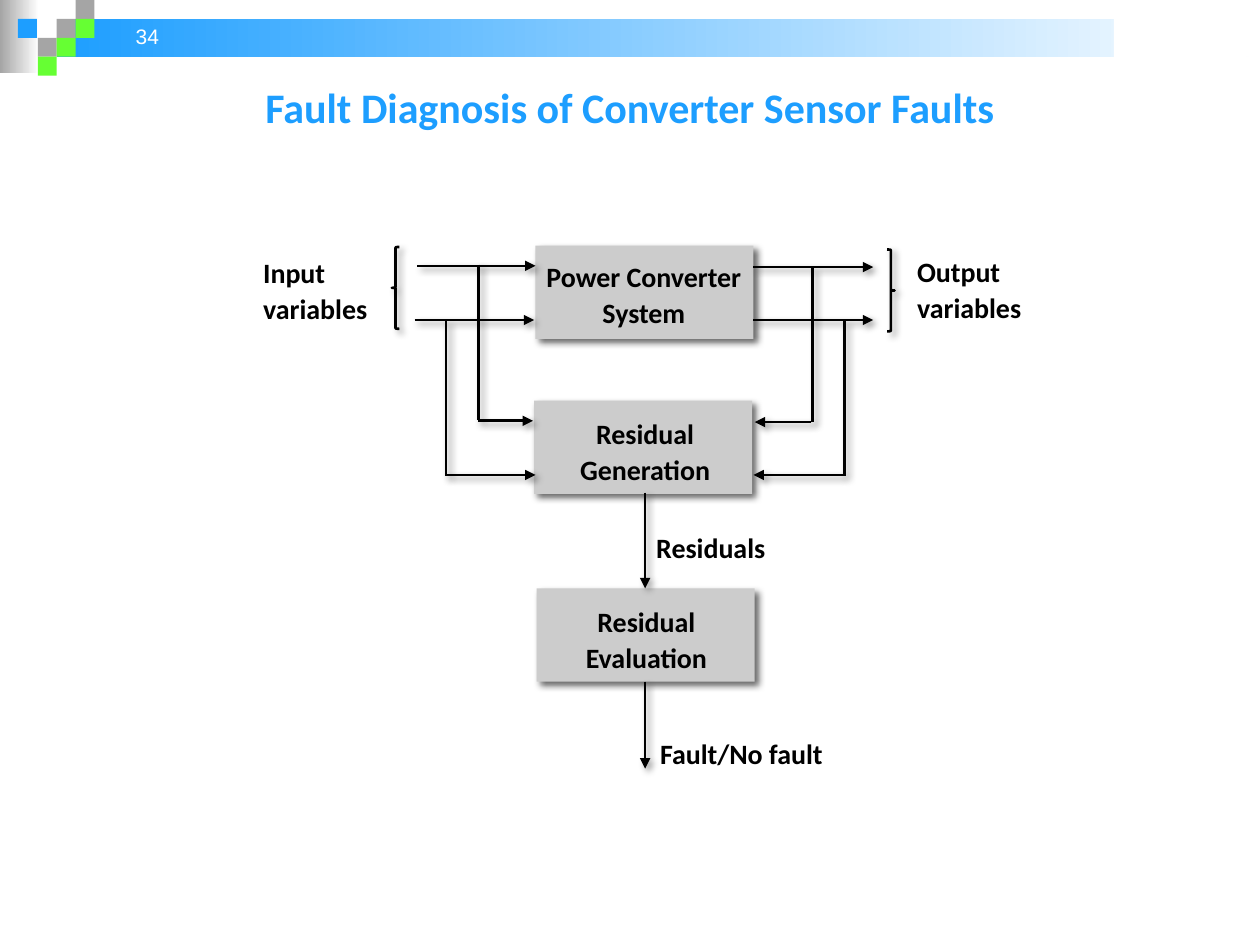
from typing import NamedTuple

from lxml.etree import SubElement
from pptx import Presentation
from pptx.dml.color import RGBColor
from pptx.enum.shapes import MSO_CONNECTOR, MSO_SHAPE as Shape
from pptx.enum.text import MSO_ANCHOR as Anchor, PP_ALIGN as Align
from pptx.oxml.ns import qn
from pptx.util import Inches, Pt

# Slide grid: 100 columns by 75 rows
COLS, ROWS = 100, 75
CELL = Inches(10) / COLS
TILE = 1.5
BLUE, GREY, GREEN = "1D9EFF", "A5A5A5", "66FF33"
BLACK, WHITE, BOX_GREY = "000000", "FFFFFF", "CCCCCC"
BOX_W, BOX_H = 17.3, 7.4


class Tile(NamedTuple):
    col: float
    row: int
    color: str


class Label(NamedTuple):
    text: str
    x: float
    y: float
    w: float
    h: float
    align: Align = Align.LEFT


class Wire(NamedTuple):
    x1: float
    y1: float
    x2: float
    y2: float
    arrow: bool = True


TILES = [
    Tile(3, 1, GREY), Tile(4, 0, GREY), Tile(4, 1, GREEN),
    Tile(2, 2, GREY), Tile(0.95, 1, BLUE), Tile(3, 2, GREEN),
    Tile(2, 3, GREEN),
]
BOXES = [(42.5, 19.5), (42.4, 31.8), (42.6, 46.7)]
BRACES = [(31.1, 19.6, 0), (70.4, 19.8, 180)]
WIRES = [
    # Inputs and outputs of the converter
    Wire(33.1, 21.1, 42.5, 21.1), Wire(32.9, 25.4, 42.4, 25.4),
    Wire(59.8, 21.2, 69.3, 21.2), Wire(59.8, 25.4, 69.3, 25.4),
    # Input taps to residual generation
    Wire(35.4, 25.5, 35.4, 37.8, False), Wire(35.4, 37.7, 42.5, 37.7),
    Wire(38, 21, 38, 33.3, False), Wire(37.9, 33.4, 42.3, 33.4),
    # Output taps to residual generation
    Wire(67, 25.5, 67, 37.8, False), Wire(66.9, 37.7, 59.8, 37.7),
    Wire(64.5, 21.3, 64.5, 33.5, False), Wire(64.4, 33.5, 59.9, 33.5),
    # Residuals and decision
    Wire(51.2, 39.1, 51.2, 46.7), Wire(51.2, 54.1, 51.2, 61),
]
LABELS = [
    Label("Input variables", 19.9, 19.6, 11, 7.1),
    Label("Output variables", 71.8, 19.5, 12.8, 7.1),
    Label("Power Converter System", 41.7, 19.9, 18.8, 6.3, Align.CENTER),
    Label("Residual Generation", 42.8, 32.4, 16.8, 6.3, Align.CENTER),
    Label("Residual Evaluation", 42.9, 47.3, 16.8, 6.3, Align.CENTER),
    Label("Residuals", 51.1, 41.4, 18.9, 5.1),
    Label("Fault/No fault", 51.4, 57.8, 16, 4.2),
]


def rgb(color: str) -> RGBColor:
    return RGBColor.from_string(color)


def grid(*cells: float) -> list[int]:
    return [round(c * CELL) for c in cells]


def set_shadow(sp, alpha: int = 0) -> None:
    """Replace the theme shadow by a soft one, or by none if alpha is 0."""
    spPr = sp._element.spPr
    for old in spPr.findall(qn("a:effectLst")):
        spPr.remove(old)
    effects = SubElement(spPr, qn("a:effectLst"))
    if alpha:
        shadow = SubElement(effects, qn("a:outerShdw"), blurRad=str(Pt(4)),
                            dist=str(Pt(3)), dir=str(45 * 60000),
                            algn="tl", rotWithShape="0")
        color = SubElement(shadow, qn("a:srgbClr"), val=BLACK)
        SubElement(color, qn("a:alpha"), val=str(alpha * 1000))


def add_rect(s, x: float, y: float, w: float, h: float,
             *colors: str, alpha: int = 0) -> None:
    """One colour gives a solid fill, two a left-to-right gradient."""
    sp = s.shapes.add_shape(Shape.RECTANGLE, *grid(x, y, w, h))
    if len(colors) == 1:
        sp.fill.solid()
        sp.fill.fore_color.rgb = rgb(colors[0])
    else:
        sp.fill.gradient()
        sp.fill.gradient_angle = 0
        for stop, pos, color in zip(sp.fill.gradient_stops, (0, 1), colors):
            stop.position = pos
            stop.color.rgb = rgb(color)
    sp.line.fill.background()
    set_shadow(sp, alpha)


def set_line(sp) -> None:
    sp.line.color.rgb = rgb(BLACK)
    sp.line.width = Pt(1.5)


def add_brace(s, x: float, y: float, angle: int) -> None:
    sp = s.shapes.add_shape(Shape.LEFT_BRACE, *grid(x, y, 0.6, 6.5))
    sp.adjustments[0] = 0.08
    sp.rotation = angle
    sp.fill.background()
    set_line(sp)
    set_shadow(sp, 40)


def add_wire(s, wire: Wire) -> None:
    sp = s.shapes.add_connector(MSO_CONNECTOR.STRAIGHT, *grid(*wire[:4]))
    set_line(sp)
    if wire.arrow:
        SubElement(sp.line._get_or_add_ln(), qn("a:tailEnd"), type="triangle")
    set_shadow(sp, 40)


def add_text(s, label: Label, size: int = 16, color: str = BLACK,
             font: str = "Calibri", bold: bool = True,
             anchor: Anchor = Anchor.TOP, spacing: float = 1.07) -> None:
    tf = s.shapes.add_textbox(*grid(*label[1:5])).text_frame
    tf.word_wrap = True
    tf.vertical_anchor = anchor
    p = tf.paragraphs[0]
    p.alignment = label.align
    p.line_spacing = spacing
    r = p.add_run()
    r.text = label.text
    r.font.name, r.font.size, r.font.bold = font, Pt(size), bold
    r.font.color.rgb = rgb(color)


def main() -> None:
    prs = Presentation()
    prs.slide_width, prs.slide_height = grid(COLS, ROWS)
    s = prs.slides.add_slide(prs.slide_layouts[6])

    # Header band, tiles and slide number
    add_rect(s, 0, 0, 3.1, 5.8, GREY, WHITE)
    add_rect(s, 4.5, TILE, 95.5, 2 * TILE, BLUE, WHITE)
    for tile in TILES:
        add_rect(s, tile.col * TILE, tile.row * TILE, TILE, TILE, tile.color)
    add_text(s, Label("34", 3.8, 0.9, 9.8, 4, Align.RIGHT), 12, WHITE,
             "Arial", False, Anchor.MIDDLE, 1)
    add_rect(s, 88.4, 0, 10.5, 6.8, WHITE)
    # The band shows no further than this cover
    add_rect(s, 98.9, TILE, 1.1, 2 * TILE, WHITE)

    # Block diagram
    for x, y in BOXES:
        add_rect(s, x, y, BOX_W, BOX_H, BOX_GREY, alpha=60)
    for brace in BRACES:
        add_brace(s, *brace)
    for wire in WIRES:
        add_wire(s, wire)
    for label in LABELS:
        add_text(s, label)

    # Title
    title = Label("Fault Diagnosis of Converter Sensor Faults",
                  5, 4.4, 90, 8.1, Align.CENTER)
    add_text(s, title, 24, BLUE, anchor=Anchor.MIDDLE, spacing=1)
    prs.save("out.pptx")


if __name__ == "__main__":
    main()
